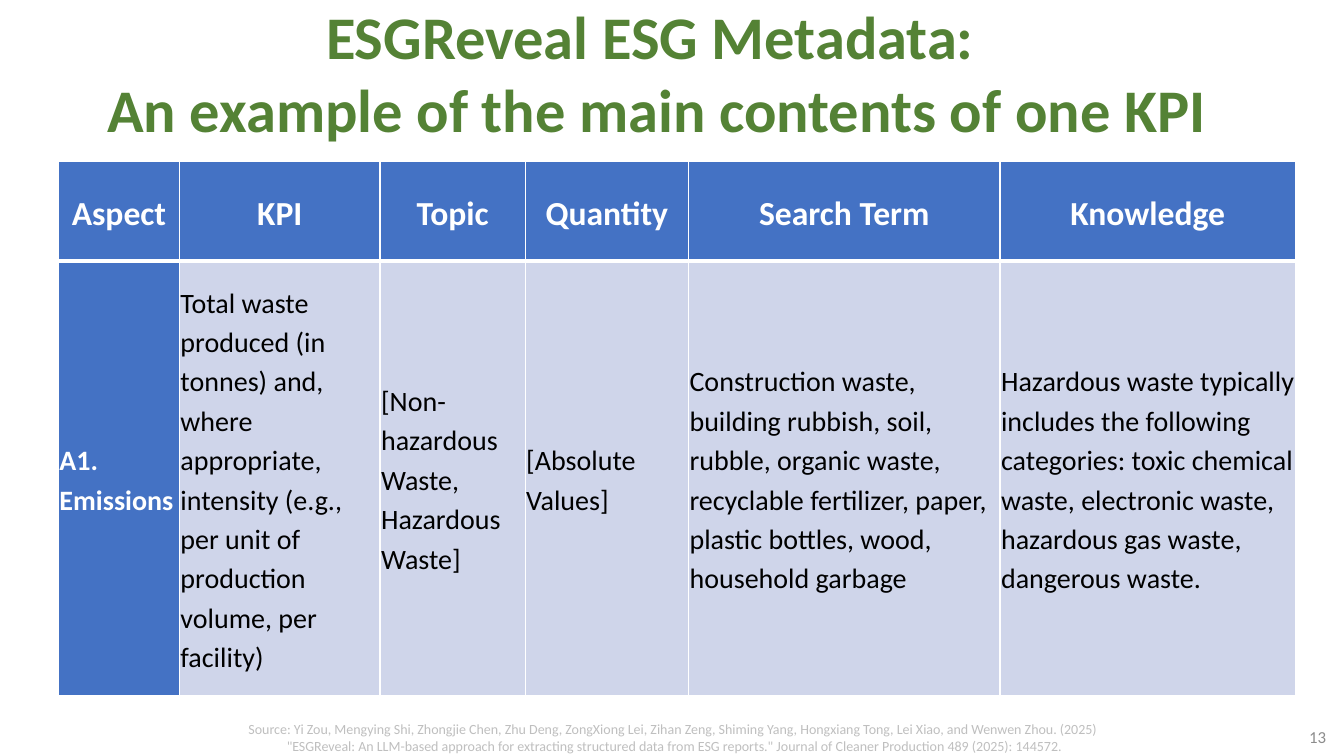
from lxml import etree
from pptx import Presentation
from pptx import util as u
from pptx.dml import color
from pptx.enum import text
from pptx.oxml import ns

TITLE = "ESGReveal ESG Metadata: \vAn example of the main contents of one KPI"
COLUMNS = [
    ("Aspect", 120, "A1. Emissions"),
    ("KPI", 199, "Total waste produced (in tonnes) and, where appropriate, intensity "
                 "(e.g., per unit of production volume, per facility)"),
    ("Topic", 144, "[Non-hazardous Waste, Hazardous Waste]"),
    ("Quantity", 162, "[Absolute Values]"),
    ("Search Term", 309, "Construction waste, building rubbish, soil, rubble, organic waste, "
                         "recyclable fertilizer, paper, plastic bottles, wood, household garbage"),
    ("Knowledge", 293, "Hazardous waste typically includes the following categories: toxic "
                       "chemical waste, electronic waste, hazardous gas waste, dangerous waste."),
]
SOURCE = ("Source: Yi Zou, Mengying Shi, Zhongjie Chen, Zhu Deng, ZongXiong Lei, Zihan Zeng, "
          "Shiming Yang, Hongxiang Tong, Lei Xiao, and Wenwen Zhou. (2025) \v"
          "\"ESGReveal: An LLM-based approach for extracting structured data from ESG reports.\" "
          "Journal of Cleaner Production 489 (2025): 144572.")
PAGE_NUMBER = "13"
COLORS = {"title": "548235", "header": "4472C4", "body": "CFD5EA", "white": "FFFFFF",
          "black": "000000", "number": "8C8C8C", "source": "BFBFBF"}
ROW_HEIGHTS = (99, 431)
LEFT, CENTER, RIGHT = text.PP_ALIGN.LEFT, text.PP_ALIGN.CENTER, text.PP_ALIGN.RIGHT
MIDDLE, TOP = text.MSO_ANCHOR.MIDDLE, text.MSO_ANCHOR.TOP


def px(length):
    return u.Inches(length / 100)


def rgb(name):
    return color.RGBColor.from_string(COLORS[name])


def write(frame, words, size, ink, bold=False, align=CENTER, anchor=MIDDLE,
          spacing=1.0, after=0):
    frame.word_wrap = True
    frame.vertical_anchor = anchor
    para = frame.paragraphs[0]
    para.text = words
    para.alignment = align
    para.line_spacing = spacing
    para.space_after = u.Pt(after)
    for span in para.runs:
        span.font.name = "Calibri"
        span.font.size = u.Pt(size)
        span.font.bold = bold
        span.font.color.rgb = rgb(ink)


def add_border(cell, side, width):
    line = etree.SubElement(cell._tc.get_or_add_tcPr(), ns.qn("a:ln" + side), w=str(u.Pt(width)))
    fill = etree.SubElement(line, ns.qn("a:solidFill"))
    etree.SubElement(fill, ns.qn("a:srgbClr"), val=COLORS["white"])


def format_cell(cell, words, row, column):
    thickness = {"L": 1, "R": 1, "T": 3 if row else 1, "B": 1 if row else 3}
    for side, width in thickness.items():
        add_border(cell, side, width)
    strong = row == 0 or column == 0
    cell.fill.solid()
    cell.fill.fore_color.rgb = rgb("header" if strong else "body")
    cell.margin_left = cell.margin_right = cell.margin_top = cell.margin_bottom = px(1)
    cell.vertical_anchor = MIDDLE
    write(cell.text_frame, words, 20 if row else 24, "white" if strong else "black",
          bold=strong, align=LEFT if row else CENTER, spacing=1.15, after=8)


def main():
    deck = Presentation()
    deck.slide_width, deck.slide_height = u.Inches(13.33), u.Inches(7.5)
    page = deck.slides.add_slide(deck.slide_layouts[5])

    title = page.shapes.title
    title.left, title.top, title.width, title.height = map(px, (71, 6, 1161, 131))
    write(title.text_frame, TITLE, 43.2, "title", bold=True)
    title.text_frame.auto_size = text.MSO_AUTO_SIZE.NONE

    total = sum(width for _, width, _ in COLUMNS)
    grid = page.shapes.add_table(len(ROW_HEIGHTS), len(COLUMNS), px(58), px(160),
                                 px(total), px(sum(ROW_HEIGHTS))).table
    for row, height in enumerate(ROW_HEIGHTS):
        grid.rows[row].height = px(height)
    for column, (heading, width, detail) in enumerate(COLUMNS):
        grid.columns[column].width = px(width)
        for row, words in enumerate((heading, detail)):
            format_cell(grid.cell(row, column), words, row, column)

    number = page.shapes.add_textbox(px(1220), px(718), px(105), px(26))
    write(number.text_frame, PAGE_NUMBER, 12, "number", align=RIGHT)
    source = page.shapes.add_textbox(px(71), px(710), px(1195), px(44))
    write(source.text_frame, SOURCE, 10, "source", anchor=TOP)

    deck.save("out.pptx")


if __name__ == "__main__":
    main()
